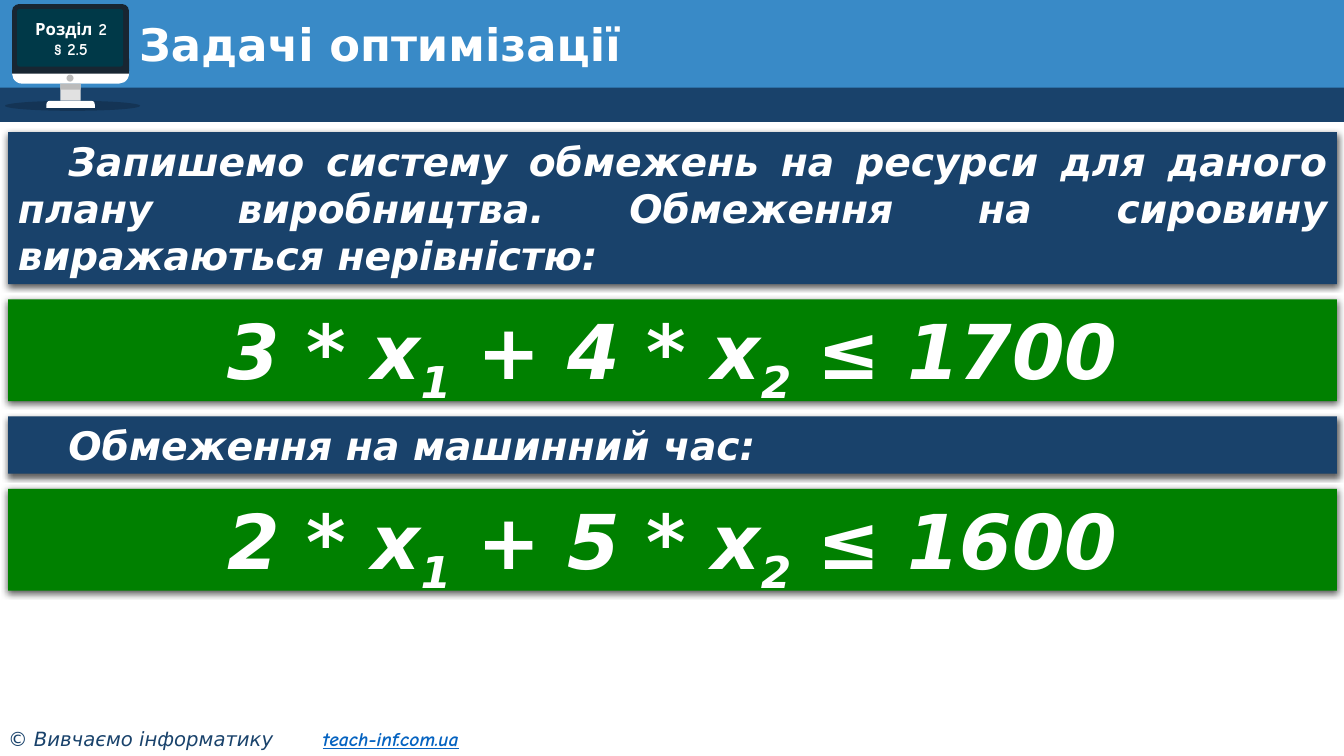
import pptx
import pptx.dml.color
import pptx.enum.shapes
import pptx.enum.text
import pptx.oxml
import pptx.oxml.ns
import pptx.util

SHAPE = pptx.enum.shapes.MSO_SHAPE
ALIGN = pptx.enum.text.PP_ALIGN
ANCHOR = pptx.enum.text.MSO_ANCHOR
FIT = pptx.enum.text.MSO_AUTO_SIZE

# Content
TITLE = "Задачі оптимізації"
SECTION = ["Розділ 2", "§ 2.5"]
FOOTER = ["© Вивчаємо інформатику\t", "teach-inf.com.ua"]
# Panels from top to bottom: style, height in rows, runs (every second run is a subscript)
PANELS = [
    ("statement", 151, ["Запишемо систему обмежень на ресурси для даного плану "
                        "виробництва. Обмеження на сировину виражаються нерівністю:"]),
    ("formula", 101, ["3 * х", "1", " + 4 * х", "2", " ≤ 1700"]),
    ("statement", 57, ["Обмеження на машинний час:"]),
    ("formula", 101, ["2 * х", "1", " + 5 * х", "2", " ≤ 1600"]),
]

# Theme
THEME = {
    "sky": "398AC7", "navy": "19426B", "green": "008000", "white": "FFFFFF",
    "black": "000000", "case": "182632", "screen": "003948",
    "stand": "E1E1E1", "grey": "BBBBBB", "link": "0563C1",
    "main_font": "DejaVu Sans", "note_font": "Comic Neue",
    "title": 32, "statement": 28, "formula": 54, "footer": 14, "section": 12,
}
TITLE_FONT = {"name": THEME["main_font"], "size": THEME["title"],
              "color": THEME["white"], "bold": True, "italic": False}
SECTION_FONT = {**TITLE_FONT, "name": THEME["note_font"], "size": THEME["section"]}
FOOTER_FONT = {"name": THEME["main_font"], "size": THEME["footer"],
               "color": THEME["navy"], "italic": True}
LINK_FONT = {**FOOTER_FONT, "name": THEME["note_font"], "color": THEME["link"],
             "bold": True, "underline": True}
PANEL_STYLES = {
    "statement": {"fill": "navy", "align": ALIGN.JUSTIFY, "indent": 50},
    "formula": {"fill": "green", "align": ALIGN.CENTER, "indent": 0},
}

# Grid of the slide
COLUMNS, ROWS = 1333, 750
CELL = pptx.util.Inches(0.01)
MARGIN, PANEL_TOP, PANEL_GAP = 8, 131, 15
LINK_TAB = 312

# Header bars and monitor: shape, (left, top, width, height), colour, corner, opacity
HEADER = [
    (SHAPE.RECTANGLE, (0, 0, COLUMNS, 91), "sky", None, 100),
    (SHAPE.RECTANGLE, (0, 87, COLUMNS, 34), "navy", None, 100),
    (SHAPE.OVAL, (5, 100, 134, 10), "black", None, 20),
    (SHAPE.ROUNDED_RECTANGLE, (12, 53, 116, 30), "white", 0.33, 100),
    (SHAPE.ROUND_2_SAME_RECTANGLE, (12, 4, 116, 69), "case", 0.1, 100),
    (SHAPE.RECTANGLE, (60, 83, 20, 17), "stand", None, 100),
    (SHAPE.RECTANGLE, (60, 83, 20, 6), "grey", None, 100),
    (SHAPE.ROUND_2_SAME_RECTANGLE, (46, 100, 48, 7), "white", 0.5, 100),
    (SHAPE.OVAL, (66, 74, 7, 7), "grey", None, 100),
    (SHAPE.ROUNDED_RECTANGLE, (17, 9, 105, 57), "screen", 0.04, 100),
]


def on_grid(*cells):
    return [round(cell * CELL) for cell in cells]


def add_element(parent, xml):
    namespaces = pptx.oxml.ns.nsdecls("a")
    parent.append(pptx.oxml.parse_xml(xml.replace(" ", f" {namespaces} ", 1)))


def add_block(slide, kind, box, color, corner=None, opacity=100):
    shape = slide.shapes.add_shape(kind, *on_grid(*box))
    shape.shadow.inherit = False
    shape.line.fill.background()
    shape.fill.solid()
    shape.fill.fore_color.rgb = pptx.dml.color.RGBColor.from_string(THEME[color])
    if corner is not None:
        shape.adjustments[0] = corner
    if opacity < 100:
        for tone in shape.element.spPr.iter(pptx.oxml.ns.qn("a:srgbClr")):
            add_element(tone, f'<a:alpha val="{opacity * 1000}"/>')
    return shape


def add_shadow(shape):
    effects = shape.element.spPr.find(pptx.oxml.ns.qn("a:effectLst"))
    add_element(effects, '<a:outerShdw blurRad="57150" dist="19050" dir="5400000" '
                         'algn="ctr" rotWithShape="0"><a:srgbClr val="000000">'
                         '<a:alpha val="63000"/></a:srgbClr></a:outerShdw>')


def add_run(paragraph, text, style):
    run = paragraph.add_run()
    run.text = text
    for name, value in style.items():
        if name == "color":
            run.font.color.rgb = pptx.dml.color.RGBColor.from_string(value)
        else:
            setattr(run.font, name, pptx.util.Pt(value) if name == "size" else value)
    return run


def format_frame(frame, **settings):
    for name, value in {"word_wrap": True, **settings}.items():
        setattr(frame, name, value)
    return frame


def add_text_box(slide, box, **settings):
    return format_frame(slide.shapes.add_textbox(*on_grid(*box)).text_frame, **settings)


def add_panel(slide, top, height, style_name, runs):
    style = PANEL_STYLES[style_name]
    box = (MARGIN, top, COLUMNS - 2 * MARGIN + 1, height)
    shape = add_block(slide, SHAPE.RECTANGLE, box, style["fill"])
    add_shadow(shape)
    frame = format_frame(shape.text_frame, vertical_anchor=ANCHOR.TOP,
                         auto_size=FIT.SHAPE_TO_FIT_TEXT)
    paragraph = frame.paragraphs[0]
    paragraph.alignment = style["align"]
    properties = paragraph._p.get_or_add_pPr()
    properties.set("marL", "0")
    properties.set("indent", str(style["indent"] * CELL))
    font = {**TITLE_FONT, "size": THEME[style_name], "italic": True}
    for index, text in enumerate(runs):
        run = add_run(paragraph, text, font)
        if index % 2:
            run._r.get_or_add_rPr().set("baseline", "-25000")


def add_title(slide):
    title = slide.shapes.title
    slide.shapes[-1].element.addnext(title.element)  # in front of the header bars
    title.left, title.top, title.width, title.height = on_grid(128, 18, 990, 58)
    frame = format_frame(title.text_frame, vertical_anchor=ANCHOR.MIDDLE, auto_size=FIT.NONE)
    paragraph = frame.paragraphs[0]
    paragraph.alignment = ALIGN.LEFT
    paragraph.line_spacing = 0.9
    add_run(paragraph, TITLE, TITLE_FONT)


def add_footer(slide):
    frame = add_text_box(slide, (0, 716, 521, 34), margin_left=MARGIN * CELL)
    paragraph = frame.paragraphs[0]
    add_element(paragraph._p.get_or_add_pPr(),
                f'<a:tabLst ><a:tab pos="{LINK_TAB * CELL}" algn="l"/></a:tabLst>')
    for text, style in zip(FOOTER, (FOOTER_FONT, LINK_FONT)):
        add_run(paragraph, text, style)


def add_section(slide):
    frame = add_text_box(slide, (13, 9, 115, 59), vertical_anchor=ANCHOR.MIDDLE)
    for index, line in enumerate(SECTION):
        paragraph = frame.add_paragraph() if index else frame.paragraphs[0]
        paragraph.alignment = ALIGN.CENTER
        add_run(paragraph, line, SECTION_FONT)


def main():
    presentation = pptx.Presentation()
    presentation.slide_width, presentation.slide_height = on_grid(COLUMNS, ROWS)
    slide = presentation.slides.add_slide(presentation.slide_layouts.get_by_name("Title Only"))

    # Header, footer and title
    for block in HEADER:
        add_block(slide, *block)
    add_footer(slide)
    add_section(slide)
    add_title(slide)

    # Stack of panels
    top = PANEL_TOP
    for style_name, height, runs in PANELS:
        add_panel(slide, top, height, style_name, runs)
        top += height + PANEL_GAP

    presentation.save("out.pptx")


if __name__ == "__main__":
    main()
